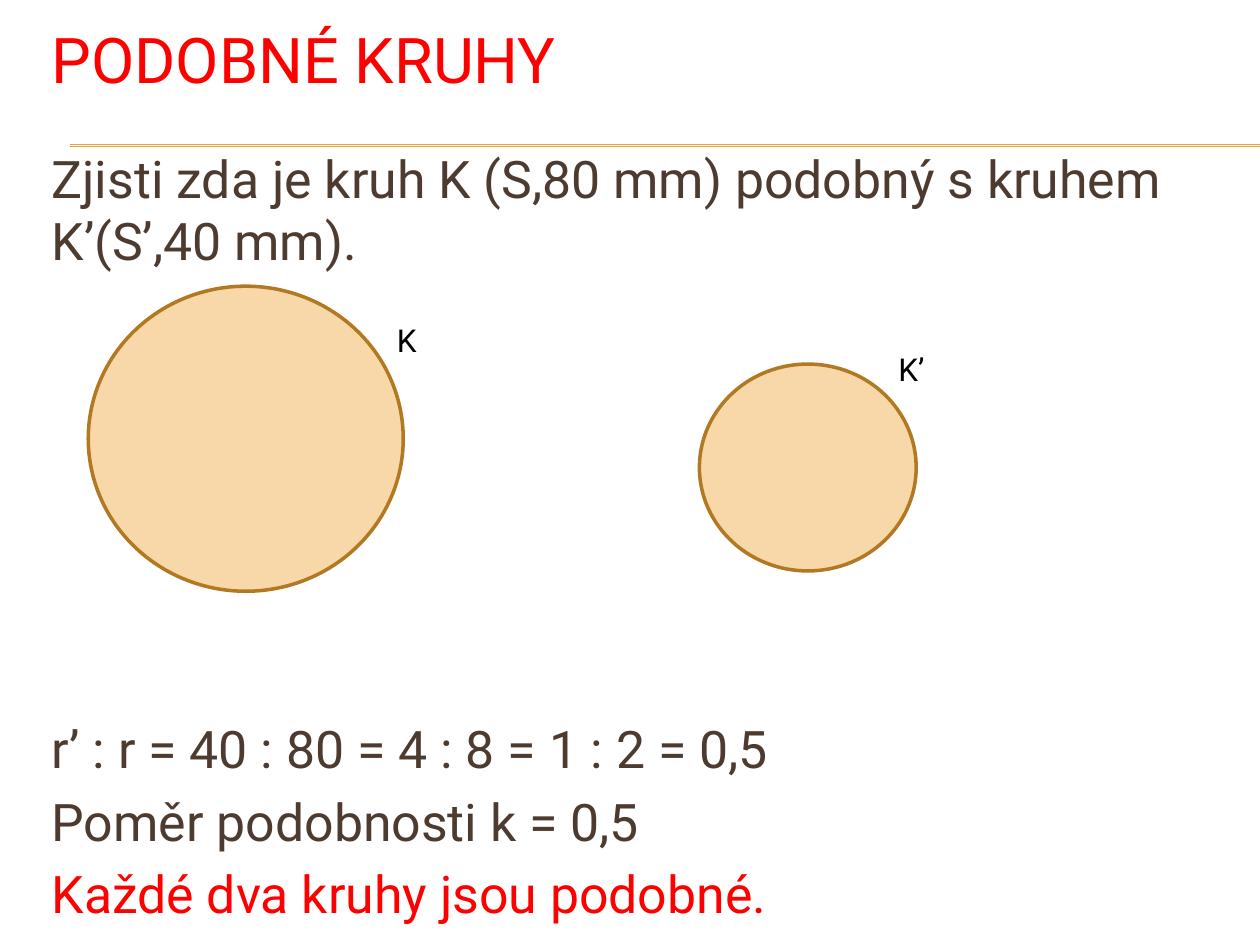
from dataclasses import dataclass

from lxml import etree
from pptx import Presentation
from pptx import util as u
from pptx.dml.color import RGBColor
from pptx.enum import shapes, text
from pptx.oxml.ns import qn


@dataclass(frozen=True)
class Theme:
    font: str = "Roboto"
    red: str = "FF0000"
    brown: str = "4E3B30"
    black: str = "000000"
    amber: str = "F0A22E"
    outline: str = "B27822"
    title: float = 36
    body: float = 29.6
    label: float = 18
    body_line: float = 35.5
    body_gap: float = 6
    rule: float = 0.75
    border: float = 2
    fill_alpha: int = 41


class SlideBuilder:
    def __init__(self, slide, theme):
        self.slide, self.theme = slide, theme

    def text(self, box, lines, size, line=None, gap=0, middle=False):
        """Add a text box; lines holds (wording, colour) pairs."""
        sp = self.slide.shapes.add_textbox(*map(u.Cm, box))
        tf = sp.text_frame
        tf.word_wrap = True
        anchor = text.MSO_ANCHOR
        tf.vertical_anchor = anchor.MIDDLE if middle else anchor.TOP
        for i, (wording, color) in enumerate(lines):
            p = tf.add_paragraph() if i else tf.paragraphs[0]
            p.space_before = u.Pt(gap if i else 0)
            if line:
                p.line_spacing = u.Pt(line)
            r = p.add_run()
            r.text = wording
            r.font.name = self.theme.font
            r.font.size = u.Pt(size)
            r.font.color.rgb = RGBColor.from_string(color)

    def rule(self, x1, x2, y):
        ln = self.slide.shapes.add_connector(
            shapes.MSO_CONNECTOR.STRAIGHT, u.Cm(x1), u.Cm(y), u.Cm(x2), u.Cm(y))
        ln.line.color.rgb = RGBColor.from_string(self.theme.amber)
        ln.line.width = u.Pt(self.theme.rule)
        etree.SubElement(ln._element.spPr, qn("a:effectLst"))

    def circle(self, box):
        t = self.theme
        sp = self.slide.shapes.add_shape(
            shapes.MSO_SHAPE.OVAL, *map(u.Cm, box))
        sp.shadow.inherit = False
        sp.fill.solid()
        sp.fill.fore_color.rgb = RGBColor.from_string(t.amber)
        color = sp._element.spPr.find(qn("a:solidFill"))[0]
        etree.SubElement(color, qn("a:alpha"), val=str(t.fill_alpha * 1000))
        sp.line.color.rgb = RGBColor.from_string(t.outline)
        sp.line.width = u.Pt(t.border)


def main():
    prs = Presentation()
    prs.slide_width, prs.slide_height = u.Cm(25.4), u.Cm(19.05)
    t = Theme()
    s = SlideBuilder(prs.slides.add_slide(prs.slide_layouts[6]), t)
    left, width = 0.79, 24.13

    # Double rule under the title
    for y in (2.92, 2.95):
        s.rule(1.42, 25.4, y)

    # Title
    s.text((left, 0, width, 2.34), [("PODOBNÉ KRUHY", t.red)],
           t.title, middle=True)

    # Task and solution
    task = [("Zjisti zda je kruh K (S,80 mm) podobný s kruhem "
             "K’(S’,40 mm).", t.brown)]
    solution = [("r’ : r = 40 : 80 = 4 : 8 = 1 : 2 = 0,5", t.brown),
                ("Poměr podobnosti k = 0,5", t.brown),
                ("Každé dva kruhy jsou podobné.", t.red)]
    for top, height, lines in ((2.83, 2.8, task), (14.33, 4.4, solution)):
        s.text((left, top, width, height), lines, t.body,
               t.body_line, t.body_gap)

    # Circles with their labels
    for name, label_at, circle in (
            ("K", (7.75, 6.35), (1.78, 5.77, 6.35, 6.15)),
            ("K’", (17.86, 6.93), (14.1, 7.34, 4.37, 4.17))):
        s.text((*label_at, 1.4, 1.02), [(name, t.black)], t.label)
        s.circle(circle)

    prs.save("out.pptx")


if __name__ == "__main__":
    main()
